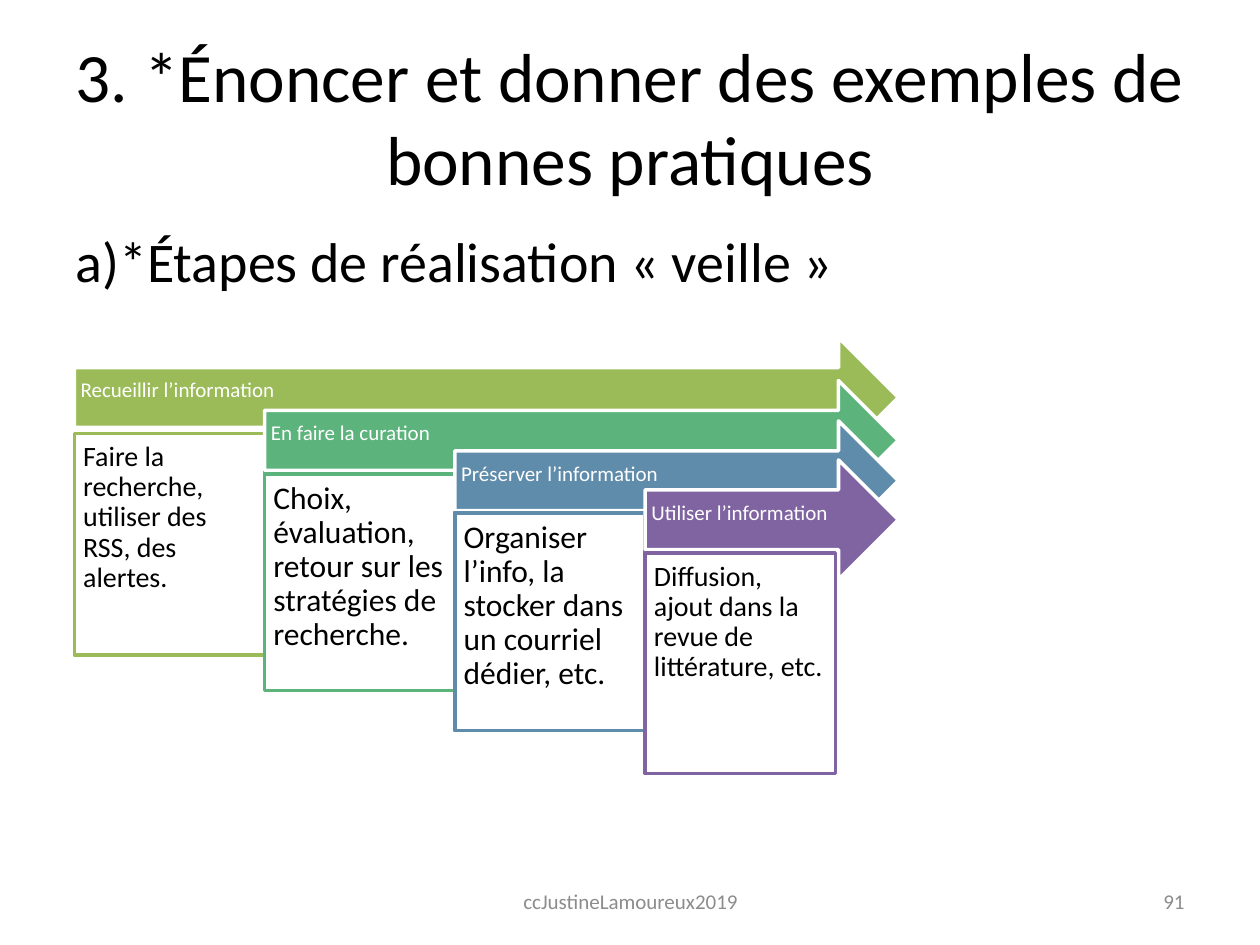
from dataclasses import dataclass

from pptx import Presentation
from pptx import util as u
from pptx.dml.color import RGBColor
from pptx.enum import shapes, text

BLACK = RGBColor(0x00, 0x00, 0x00)
WHITE = RGBColor(0xFF, 0xFF, 0xFF)
GREY = RGBColor(0x8C, 0x8C, 0x8C)
LIME = RGBColor(0x9B, 0xBB, 0x59)
GREEN = RGBColor(0x5C, 0xB3, 0x7C)
BLUE = RGBColor(0x60, 0x8C, 0xAB)
PURPLE = RGBColor(0x80, 0x64, 0xA2)

FIRST_LEFT, STAGE_STEP = 0.59, 1.51
ARROW_TIP, ARROW_HEIGHT = 7.13, 0.95
DETAIL_WIDTH = 1.51

# colour, heading, arrow top, detail top, detail height, detail text, detail size
STAGES = [
    (LIME, "Recueillir l’information", 2.68, 3.44, 1.76,
     "Faire la recherche, utiliser des RSS, des alertes.", 16),
    (GREEN, "En faire la curation", 3.02, 3.76, 1.72,
     "Choix, évaluation, retour sur les stratégies de recherche.", 18),
    (BLUE, "Préserver l’information", 3.34, 4.07, 1.73,
     "Organiser l’info, la stocker dans un courriel dédier, etc.", 18),
    (PURPLE, "Utiliser l’information", 3.65, 4.39, 1.75,
     "Diffusion, ajout dans la revue de littérature, etc.", 16),
]


@dataclass
class SlideBuilder:
    slide: object
    font: str = "Calibri"
    line_width: float = 2

    def set_words(self, shape, words, size, color, align, anchor, insets):
        """Fill a shape with one paragraph; insets are left, top, right, bottom."""
        frame = shape.text_frame
        frame.text = words
        frame.word_wrap = True
        frame.vertical_anchor = anchor
        (frame.margin_left, frame.margin_top,
         frame.margin_right, frame.margin_bottom) = map(u.Inches, insets)
        paragraph = frame.paragraphs[0]
        paragraph.alignment = align
        font = paragraph.runs[0].font
        font.name, font.size = self.font, u.Pt(size)
        font.color.rgb = color
        return paragraph

    def label(self, box, words, size, color=BLACK, align=text.PP_ALIGN.LEFT,
              anchor=text.MSO_ANCHOR.MIDDLE):
        shape = self.slide.shapes.add_textbox(*map(u.Inches, box))
        return self.set_words(shape, words, size, color, align, anchor,
                              (0.1, 0.05, 0.1, 0.05))

    def panel(self, kind, box, fill, line, words, size, color, anchor, insets):
        shape = self.slide.shapes.add_shape(kind, *map(u.Inches, box))
        shape.shadow.inherit = False
        shape.fill.solid()
        shape.fill.fore_color.rgb = fill
        shape.line.color.rgb = line
        shape.line.width = u.Pt(self.line_width)
        paragraph = self.set_words(shape, words, size, color,
                                   text.PP_ALIGN.LEFT, anchor, insets)
        paragraph.line_spacing = 0.9

    def arrow(self, left, top, color, heading):
        self.panel(shapes.MSO_SHAPE.RIGHT_ARROW,
                   (left, top, ARROW_TIP - left, ARROW_HEIGHT), color, WHITE,
                   heading, 12, WHITE, text.MSO_ANCHOR.MIDDLE,
                   (0.05, 0.05, 0.28, 0.15))

    def detail(self, left, top, height, color, words, size):
        self.panel(shapes.MSO_SHAPE.RECTANGLE,
                   (left, top, DETAIL_WIDTH, height), WHITE, color,
                   words, size, BLACK, text.MSO_ANCHOR.TOP, (0.07,) * 4)


def main():
    deck = Presentation()
    deck.slide_width, deck.slide_height = u.Inches(10), u.Inches(7.5)
    builder = SlideBuilder(deck.slides.add_slide(deck.slide_layouts[6]))

    builder.label((0.5, 0.3, 9, 1.25),
                  "3. *Énoncer et donner des exemples de bonnes pratiques",
                  39.6, align=text.PP_ALIGN.CENTER)
    subtitle = builder.label((0.5, 1.75, 9, 4.95),
                             "a)*Étapes de réalisation « veille »", 32,
                             anchor=text.MSO_ANCHOR.TOP)
    subtitle.space_before = u.Pt(6.4)
    builder.label((3.42, 6.95, 3.17, 0.4), "ccJustineLamoureux2019", 12, GREY,
                  text.PP_ALIGN.CENTER)
    builder.label((7.17, 6.95, 2.33, 0.4), "91", 12, GREY, text.PP_ALIGN.RIGHT)

    for index, stage in enumerate(STAGES):
        color, heading, arrow_top, detail_top, height, words, size = stage
        left = FIRST_LEFT + index * STAGE_STEP
        builder.arrow(left, arrow_top, color, heading)
        builder.detail(left, detail_top, height, color, words, size)

    deck.save("out.pptx")


if __name__ == "__main__":
    main()
